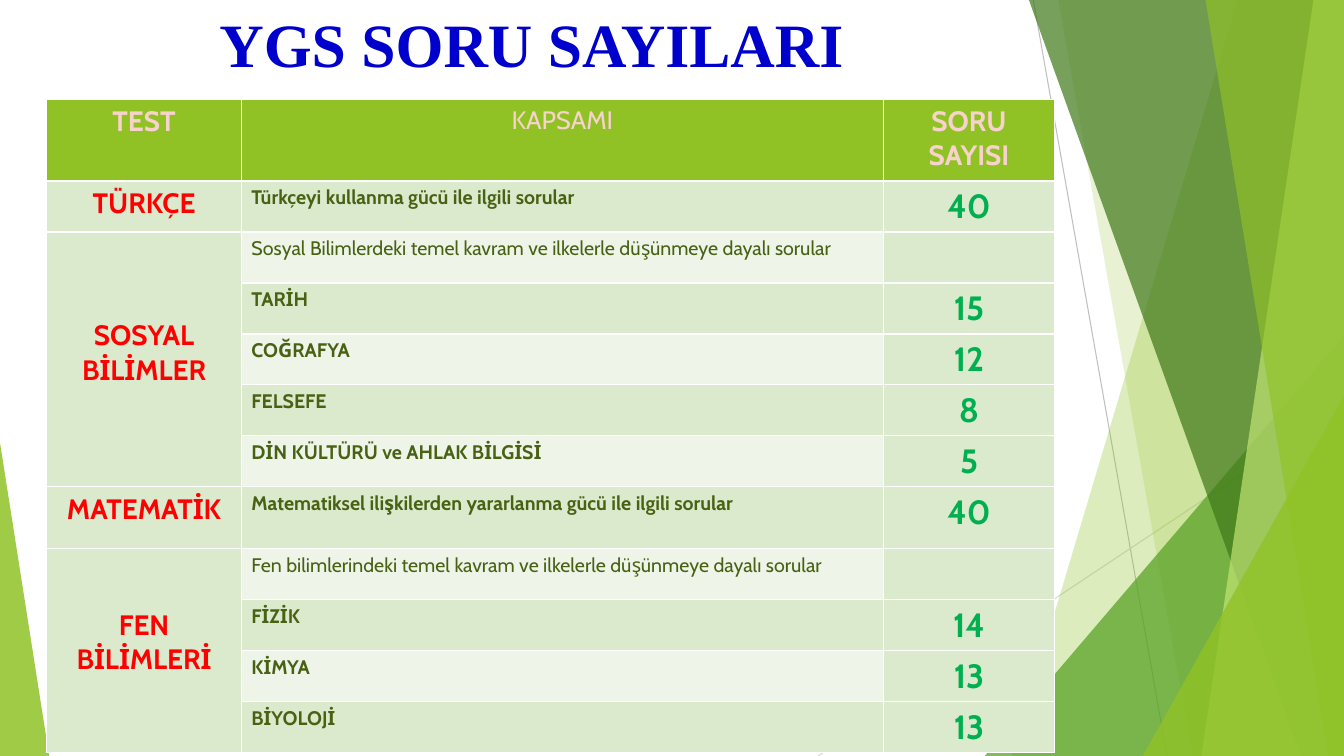
from pptx import Presentation
from pptx.dml.color import RGBColor
from pptx.enum.shapes import MSO_CONNECTOR, MSO_SHAPE
from pptx.enum.text import MSO_ANCHOR, MSO_AUTO_SIZE, PP_ALIGN
from pptx.oxml.ns import qn
from pptx.util import Cm, Pt
from lxml.etree import SubElement

WIDE, HIGH = 33.87, 19.05
HEAD = ["TEST", "KAPSAMI", "SORU SAYISI"]
TESTS = [
    ("TÜRKÇE", 0, [("Türkçeyi kullanma gücü ile ilgili sorular", "40")]),
    ("SOSYAL BİLİMLER", 2.19, [
        ("Sosyal Bilimlerdeki temel kavram ve ilkelerle düşünmeye dayalı sorular", ""),
        ("TARİH", "15"), ("COĞRAFYA", "12"), ("FELSEFE", "8"),
        ("DİN KÜLTÜRÜ ve AHLAK BİLGİSİ", "5")]),
    ("MATEMATİK", 0, [
        ("Matematiksel ilişkilerden yararlanma gücü ile ilgili sorular", "40")]),
    ("FEN BİLİMLERİ", 1.49, [
        ("Fen bilimlerindeki temel kavram ve ilkelerle düşünmeye dayalı sorular", ""),
        ("FİZİK", "14"), ("KİMYA", "13"), ("BİYOLOJİ", "13")]),
]
FACETS = [
    (10.57, 4.88, 0, "90C226", 30), (6.05, 9.43, 0, "90C226", 20),
    (13.25, 4.2, 8.46, "54A021", 72), (5.31, 12.17, 0, "3F7819", 70),
    (12.48, 9.66, 0, "C0E474", 70), (9.76, 12.86, 0, "90C226", 65),
    (13.25, 8.18, 9.98, "90C226", 80),
]


def color(code):
    """Turn a hex string into a colour."""
    return RGBColor.from_string(code)


def paint(shape, code, alpha):
    """Give a shape a see-through fill and no outline or shadow."""
    shape.shadow.inherit = False
    shape.line.fill.background()
    shape.fill.solid()
    shape.fill.fore_color.rgb = color(code)
    tint = shape.fill._xPr.find(qn("a:solidFill"))[0]
    SubElement(tint, qn("a:alpha")).set("val", str(alpha * 1000))


def wedge(slide, box, tip, code, alpha):
    """Draw a triangle in the box, its tip at a share of the width."""
    shape = slide.shapes.add_shape(
        MSO_SHAPE.ISOSCELES_TRIANGLE, *[Cm(side) for side in box])
    shape.adjustments[0] = tip
    paint(shape, code, alpha)


def ray(slide, start, end, code):
    """Draw a thin line between two points."""
    line = slide.shapes.add_connector(
        MSO_CONNECTOR.STRAIGHT, *[Cm(place) for place in start + end])
    line.line.color.rgb = color(code)
    line.line.width = Pt(0.75)
    SubElement(line._element.spPr, qn("a:effectLst"))


def fan(slide, box):
    """Draw the lines and green facets that reach the right edge of the box."""
    left, top, width, height = box
    right, foot = left + width, top + height
    ray(slide, (left + 5.42, top), (left + 8.79, foot), "BFBFBF")
    ray(slide, (right, top + 10.24), (left, foot), "D9D9D9")
    for peak, base, drop, code, alpha in FACETS:
        if drop:
            area = (left + base, top + drop, width - base, height - drop)
            wedge(slide, area, 1, code, alpha)
        else:
            form = slide.shapes.build_freeform(Cm(left + peak), Cm(top))
            ends = [(right, top), (right, foot), (left + base, foot)]
            form.add_line_segments([(Cm(x), Cm(y)) for x, y in ends])
            paint(form.convert_to_shape(), code, alpha)


def title(slide, box):
    """Set the heading in its placeholder."""
    holder = slide.shapes.title
    holder.left, holder.top, holder.width, holder.height = map(Cm, box)
    frame = holder.text_frame
    frame.text = "YGS SORU SAYILARI"
    frame.auto_size = MSO_AUTO_SIZE.NONE
    frame.vertical_anchor = MSO_ANCHOR.BOTTOM
    style(frame, 44, "0000CC", name="Times New Roman")


def style(frame, size, code, bold=True, align=PP_ALIGN.CENTER, name="Cabin"):
    """Format the first paragraph of a text frame."""
    para = frame.paragraphs[0]
    para.alignment = align
    font = para.font
    font.name, font.size, font.bold = name, Pt(size), bold
    font.color.rgb = color(code)


def write(cell, text, fill, *look, **more):
    """Fill a cell and set its text."""
    cell.fill.solid()
    cell.fill.fore_color.rgb = color(fill)
    cell.text = text
    style(cell.text_frame, *look, **more)


def grid(slide, box):
    """Build the table of tests, topics and counts."""
    left, top, width, height = box
    count = 1 + sum(len(topics) for _, _, topics in TESTS)
    table = slide.shapes.add_table(count, 3, *map(Cm, box)).table
    for column, share in zip(table.columns, (0.193, 0.637, 0.17)):
        column.width = Cm(width * share)
    tall = {0: 2.05, 7: 1.56}
    rest = (height - sum(tall.values())) / (count - len(tall))
    for index, row in enumerate(table.rows):
        row.height = Cm(tall.get(index, rest))
    for index, text in enumerate(HEAD):
        plain = index == 1
        write(table.cell(0, index), text, "90C226",
              18 if plain else 20, "F8D2CC", not plain)
    first = 1
    for test, inset, topics in TESTS:
        name = table.cell(first, 0)
        if len(topics) > 1:
            name.merge(table.cell(first + len(topics) - 1, 0))
        write(name, test, "DBE9CD", 20, "FF0000")
        if inset:
            name.margin_top = Cm(inset)
        for row, (topic, total) in enumerate(topics, first):
            band = "DBE9CD" if row % 2 else "EEF4E8"
            write(table.cell(row, 1), topic, band, 14, "486113",
                  bool(total), align=PP_ALIGN.LEFT)
            write(table.cell(row, 2), total, "DBE9CD", 24, "00B050")
        first += len(topics)


def main():
    """Build the slide and save it."""
    deck = Presentation()
    deck.slide_width, deck.slide_height = Cm(WIDE), Cm(HIGH)
    slide = deck.slides.add_slide(deck.slide_layouts[5])
    fan(slide, (20.62, 0, 13.25, HIGH))
    wedge(slide, (0, 11.15, 1.24, 7.9), 0, "90C226", 85)
    title(slide, (2.21, 0.53, 22.38, 1.6))
    grid(slide, (1.18, 2.51, 25.4, 16.46))
    deck.save("out.pptx")


if __name__ == "__main__":
    main()
